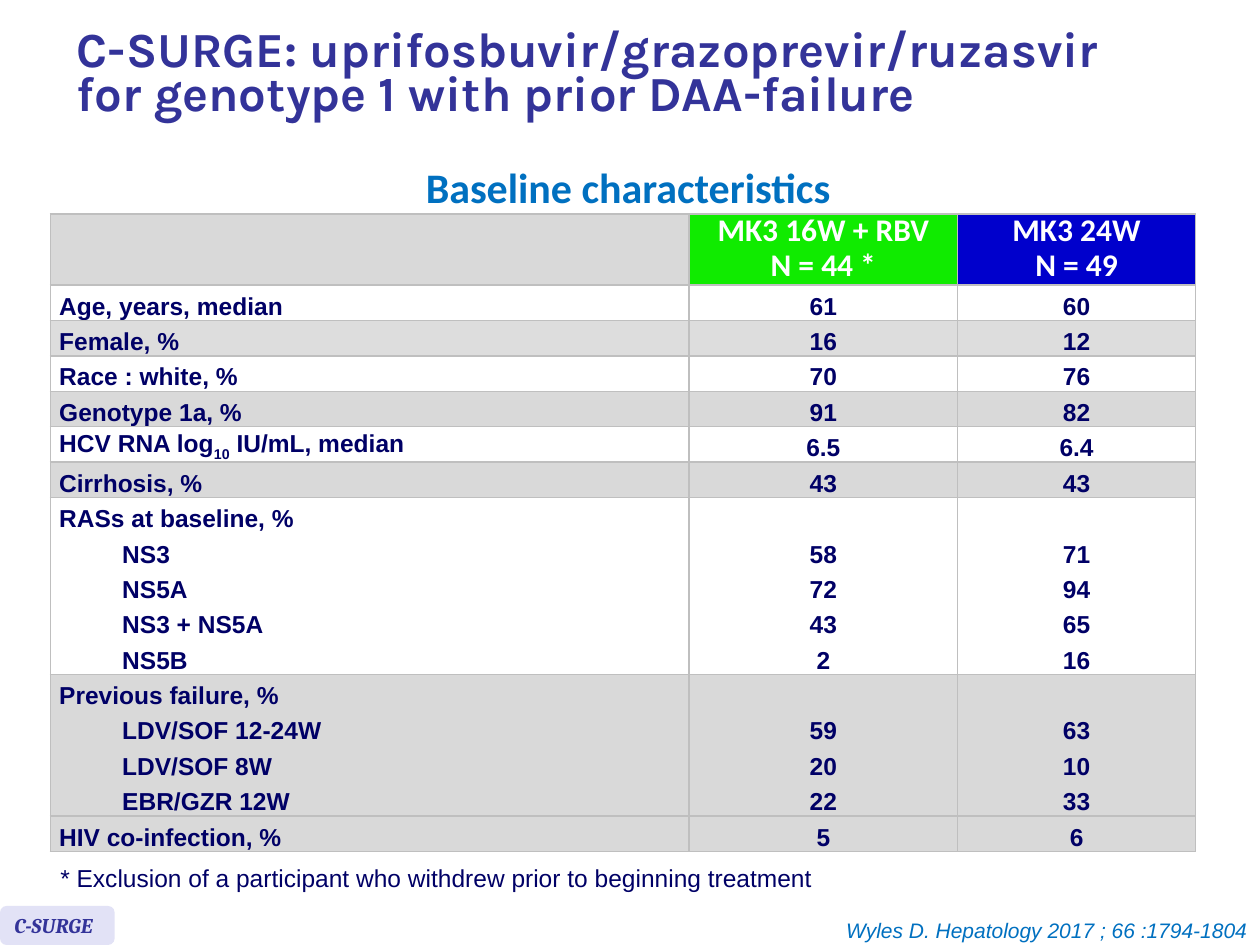
"""Build the C-SURGE baseline characteristics slide."""
from dataclasses import dataclass

from lxml import etree
from pptx import Presentation
from pptx.dml.color import RGBColor
from pptx.enum.shapes import MSO_SHAPE
from pptx.enum.text import MSO_ANCHOR, MSO_AUTO_SIZE, PP_ALIGN
from pptx.oxml.ns import qn
from pptx.util import Inches, Pt

LEFT, CENTER, RIGHT = PP_ALIGN.LEFT, PP_ALIGN.CENTER, PP_ALIGN.RIGHT
MIDDLE, BOTTOM, TOP = MSO_ANCHOR.MIDDLE, MSO_ANCHOR.BOTTOM, MSO_ANCHOR.TOP
FIT_SHAPE, NO_FIT = MSO_AUTO_SIZE.SHAPE_TO_FIT_TEXT, MSO_AUTO_SIZE.NONE
ROUNDED = MSO_SHAPE.ROUNDED_RECTANGLE

WHITE, GREY, LIGHT_GREY, BORDER = "FFFFFF", "D9D9D9", "DDDDDD", "BFBFBF"
GREEN, BLUE, NAVY, INDIGO, SKY = "10EB00", "0000CC", "000066", "333399", "0070C0"
LAVENDER = "E2E2F6"
LINE_HEIGHT = 0.28
LINE_SPACING = Pt(20.2)


@dataclass
class Style:
    font: str
    size: float
    color: str
    bold: bool = False
    italic: bool = False


@dataclass
class Characteristic:
    label: str
    rbv_16w: list[str]
    mk3_24w: list[str]
    fill: str = WHITE
    items: tuple[str, ...] = ()


@dataclass
class Caption:
    text: str
    box: tuple[float, float, float, float]
    style: Style
    align: PP_ALIGN = LEFT
    wrap: bool = False


HEADER = Style("Calibri", 18, WHITE, bold=True)
BODY = Style("Arial", 14, NAVY, bold=True)
TITLE = Style("Karla", 28, INDIGO, bold=True)
BADGE = Style("Cambria", 12, INDIGO, bold=True, italic=True)

TITLE_LINES = ["C-SURGE: uprifosbuvir/grazoprevir/ruzasvir",
               "for genotype 1 with prior DAA-failure"]
ARMS = [(["MK3 16W + RBV", "N = 44 *"], GREEN), (["MK3 24W", "N = 49"], BLUE)]
CHARACTERISTICS = [
    Characteristic("Age, years, median", ["61"], ["60"]),
    Characteristic("Female, %", ["16"], ["12"], LIGHT_GREY),
    Characteristic("Race : white, %", ["70"], ["76"]),
    Characteristic("Genotype 1a, %", ["91"], ["82"], GREY),
    Characteristic("HCV RNA log_10_ IU/mL, median", ["6.5"], ["6.4"]),
    Characteristic("Cirrhosis, %", ["43"], ["43"], GREY),
    Characteristic("RASs at baseline, %", ["58", "72", "43", "2"], ["71", "94", "65", "16"],
                   items=("NS3", "NS5A", "NS3 + NS5A", "NS5B")),
    Characteristic("Previous failure, %", ["59", "20", "22"], ["63", "10", "33"], GREY,
                   ("LDV/SOF 12-24W", "LDV/SOF 8W", "EBR/GZR 12W")),
    Characteristic("HIV co-infection, %", ["5"], ["6"], GREY),
]
CAPTIONS = [
    Caption("Baseline characteristics", (0.04, 1.23, 9.89, 0.5),
            Style("Calibri", 24, SKY, bold=True), CENTER, True),
    Caption("* Exclusion of a participant who withdrew prior to beginning treatment",
            (0.38, 6.8, 6.19, 0.34), Style("Arial", 14, NAVY)),
    Caption("Wyles D. Hepatology 2017 ; 66 :1794-1804", (6.59, 7.23, 3.41, 0.3),
            Style("Arial", 12, SKY, italic=True), RIGHT),
]


def rgb(color: str) -> RGBColor:
    """Turn a hex string into a colour."""
    return RGBColor.from_string(color)


def format_font(font, style: Style) -> None:
    """Apply a style to a font."""
    values = {"name": style.font, "size": Pt(style.size),
              "bold": style.bold, "italic": style.italic}
    for name, value in values.items():
        setattr(font, name, value)
    font.color.rgb = rgb(style.color)


def write(paragraph, text: str, style: Style, align: PP_ALIGN, spacing=None) -> None:
    """Add text to a paragraph, with parts between underscores as subscript."""
    paragraph.alignment = align
    paragraph.line_spacing = spacing
    for index, part in enumerate(text.split("_")):
        run = paragraph.add_run()
        run.text = part
        format_font(run.font, style)
        if index % 2:
            run.font._element.set("baseline", "-25000")


def add_borders(cell) -> None:
    """Draw a thin border on the four sides of a cell."""
    properties = cell._tc.get_or_add_tcPr()
    for index, side in enumerate(("a:lnL", "a:lnR", "a:lnT", "a:lnB")):
        line = etree.Element(qn(side), w=str(Pt(1)))
        fill = etree.SubElement(line, qn("a:solidFill"))
        etree.SubElement(fill, qn("a:srgbClr"), val=BORDER)
        properties.insert(index, line)


def fill_cell(cell, lines: list[str], fill: str, style: Style, align: PP_ALIGN,
              anchor: MSO_ANCHOR = MIDDLE, margin: float = 0.07) -> None:
    """Write a cell's lines, indenting those after a left-aligned label."""
    values = {"margin_left": Inches(margin), "margin_right": Inches(margin),
              "margin_top": 0, "margin_bottom": 0, "vertical_anchor": anchor}
    for name, value in values.items():
        setattr(cell, name, value)
    cell.fill.solid()
    cell.fill.fore_color.rgb = rgb(fill)
    add_borders(cell)
    frame = cell.text_frame
    for index, line in enumerate(lines):
        paragraph = frame.add_paragraph() if index else frame.paragraphs[0]
        if index and align == LEFT:
            paragraph.level = 1
            paragraph._p.get_or_add_pPr().set("marL", str(Inches(0.5)))
        write(paragraph, line, style, align, LINE_SPACING)


def add_baseline_table(slide) -> None:
    """Add the table of baseline characteristics by treatment arm."""
    line_counts = [2] + [1 + len(entry.items) for entry in CHARACTERISTICS]
    table = slide.shapes.add_table(
        len(line_counts), 3, Inches(0.4), Inches(1.7), Inches(9.09),
        Inches(LINE_HEIGHT * sum(line_counts))).table
    table.first_row = table.horz_banding = False
    for column, width in zip(table.columns, (5.07, 2.13, 1.89)):
        column.width = Inches(width)
    for row, count in zip(table.rows, line_counts):
        row.height = Inches(LINE_HEIGHT * count)
    fill_cell(table.cell(0, 0), [], GREY, HEADER, LEFT)
    for column, (heading, fill) in enumerate(ARMS, 1):
        fill_cell(table.cell(0, column), heading, fill, HEADER, CENTER, margin=0.1)
    for row, entry in enumerate(CHARACTERISTICS, 1):
        fill_cell(table.cell(row, 0), [entry.label, *entry.items], entry.fill, BODY, LEFT)
        anchor = BOTTOM if entry.items else MIDDLE
        for column, values in enumerate((entry.rbv_16w, entry.mk3_24w), 1):
            fill_cell(table.cell(row, column), values, entry.fill, BODY, CENTER, anchor)


def add_caption(slide, caption: Caption) -> None:
    """Add a line of text in its own box."""
    frame = slide.shapes.add_textbox(*map(Inches, caption.box)).text_frame
    frame.word_wrap = caption.wrap
    frame.auto_size = FIT_SHAPE
    frame.vertical_anchor = TOP
    write(frame.paragraphs[0], caption.text, caption.style, caption.align)


def add_badge(slide) -> None:
    """Add the study name badge in the lower left corner."""
    badge = slide.shapes.add_shape(ROUNDED, 0, Inches(7.19), Inches(0.91), Inches(0.31))
    badge.shadow.inherit = False
    badge.fill.solid()
    badge.fill.fore_color.rgb = rgb(LAVENDER)
    badge.line.fill.background()
    badge.text_frame.word_wrap = False
    badge.text_frame.vertical_anchor = MIDDLE
    write(badge.text_frame.paragraphs[0], "C-SURGE", BADGE, LEFT)


def set_title(slide) -> None:
    """Place and write the slide title."""
    title = slide.shapes.title
    box = {"left": 0.51, "top": 0.08, "width": 9.13, "height": 1.07}
    for name, value in box.items():
        setattr(title, name, Inches(value))
    title.text_frame.auto_size = NO_FIT
    title.text_frame.vertical_anchor = MIDDLE
    paragraph = title.text_frame.paragraphs[0]
    for index, line in enumerate(TITLE_LINES):
        if index:
            paragraph.add_line_break()
        write(paragraph, line, TITLE, LEFT, Pt(25))


def main() -> None:
    """Build and save the slide."""
    deck = Presentation()
    deck.slide_width, deck.slide_height = Inches(10), Inches(7.5)
    slide = deck.slides.add_slide(deck.slide_layouts[5])
    set_title(slide)
    add_baseline_table(slide)
    add_badge(slide)
    for caption in CAPTIONS:
        add_caption(slide, caption)
    deck.save("out.pptx")


if __name__ == "__main__":
    main()
